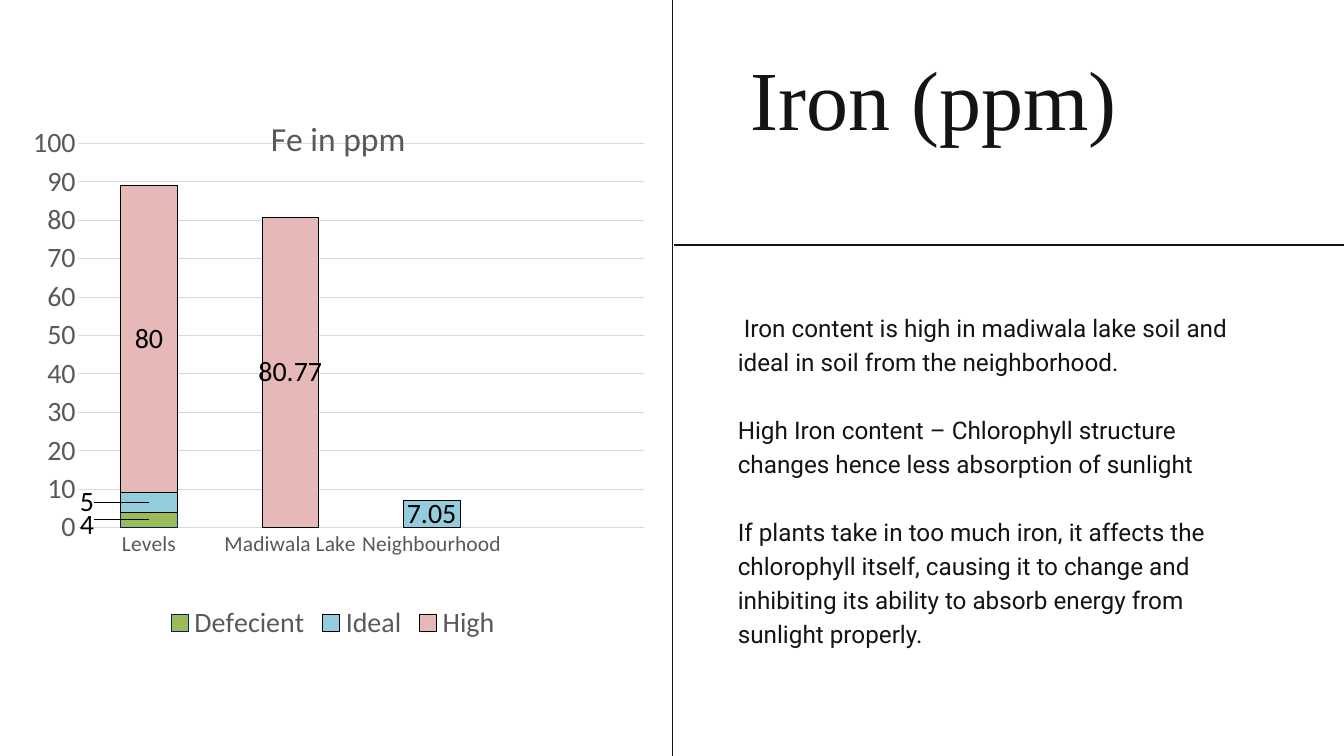
from typing import NamedTuple, Optional

from lxml import etree
from pptx import Presentation
from pptx.chart.data import CategoryChartData
from pptx.dml.color import RGBColor
from pptx.enum.chart import XL_CHART_TYPE, XL_LABEL_POSITION, XL_LEGEND_POSITION, XL_TICK_MARK
from pptx.enum.shapes import MSO_CONNECTOR
from pptx.oxml import parse_xml
from pptx.oxml.ns import nsdecls, qn
from pptx.util import Emu, Pt

PX = 9525  # EMU per px, 96 px to the inch
INK, GREY, GRID = "141414", "595959", "D9D9D9"


class Box(NamedTuple):
    x: int
    y: int
    w: int
    h: int


class Rule(NamedTuple):
    x1: int
    y1: int
    x2: int
    y2: int


class Level(NamedTuple):
    name: str
    values: tuple[Optional[float], ...]
    fill: str
    line: str
    label_shift: Optional[tuple[float, float]] = None  # share of chart size


RULES = [Rule(961, 0, 961, 1080), Rule(963, 350, 1920, 350)]
CATEGORIES = ["Levels", "Madiwala Lake", "Neighbourhood", ""]
LEVELS = [
    Level("Defecient", (4, None, None, None), "9BBB59", "002060", (-0.1, 0.01)),
    Level("Ideal", (5, None, 7.05, None), "93CDDD", "000000", (-0.1, 0)),
    Level("High", (80, 80.77, None, None), "E6B9B8", "000000"),
]
NOTES = [
    " Iron content is high in madiwala lake soil and ideal in soil from the neighborhood.",
    "High Iron content – Chlorophyll structure changes hence less absorption of sunlight",
    "If plants take in too much iron, it affects the chlorophyll itself, causing it to "
    "change and inhibiting its ability to absorb energy from sunlight properly.",
]


def px(n: int) -> Emu:
    return Emu(n * PX)


def rgb(value: str) -> RGBColor:
    return RGBColor.from_string(value)


def style(font, size: float, color: str, name: str = "Calibri") -> None:
    font.size, font.name, font.bold = Pt(size), name, False
    font.color.rgb = rgb(color)


def stroke(line, color: str, width: float) -> None:
    line.color.rgb = rgb(color)
    line.width = Pt(width)


def add_rule(s, rule: Rule) -> None:
    c = s.shapes.add_connector(MSO_CONNECTOR.STRAIGHT, *map(px, rule))
    stroke(c.line, INK, 1.5)
    etree.SubElement(c._element.spPr, qn("a:effectLst"))


def add_text(s, box: Box, texts: list[str], size: float, name: str, leading: float) -> None:
    tf = s.shapes.add_textbox(*map(px, box)).text_frame
    tf.word_wrap = True
    tf.margin_left = tf.margin_right = tf.margin_top = tf.margin_bottom = 0
    for i, text in enumerate(texts):
        p = tf.add_paragraph() if i else tf.paragraphs[0]
        p.text = text
        p.line_spacing = Pt(leading)
        if i:
            p.space_before = Pt(leading)
        style(p.font, size, INK, name)


def manual_layout(x: float, y: float, w: float = 0, h: float = 0, edge: bool = True):
    """Layout in shares of the chart; without edge, x and y are offsets."""
    parts = [("layoutTarget", "inner")] if w else []
    if edge:
        parts += [("xMode", "edge"), ("yMode", "edge")]
    parts += [("x", x), ("y", y)]
    if w:
        parts += [("w", w), ("h", h)]
    body = "".join(f'<c:{tag} val="{val}"/>' for tag, val in parts)
    return parse_xml(f'<c:layout {nsdecls("c")}><c:manualLayout>{body}</c:manualLayout></c:layout>')


def place(parent, layout, after: Optional[str] = None) -> None:
    for old in parent.findall(qn("c:layout")):
        parent.remove(old)
    if after:
        parent.find(qn(after)).addnext(layout)
    else:
        parent.insert(0, layout)


def style_series(ser, level: Level) -> None:
    ser.format.fill.solid()
    ser.format.fill.fore_color.rgb = rgb(level.fill)
    stroke(ser.format.line, level.line, 0.75)
    labels = ser.data_labels
    labels.show_value = True
    labels.position = XL_LABEL_POSITION.CENTER
    style(labels.font, 30, "000000")
    if level.label_shift:
        label = ser.points[0].data_label
        label.position = XL_LABEL_POSITION.CENTER
        style(label.font, 30, "000000")
        d_lbl = ser._element.find(f'{qn("c:dLbls")}/{qn("c:dLbl")}')
        place(d_lbl, manual_layout(*level.label_shift, edge=False), "c:idx")


def add_iron_chart(s, box: Box) -> None:
    data = CategoryChartData()
    data.categories = CATEGORIES
    for level in LEVELS:
        data.add_series(level.name, level.values)
    chart = s.shapes.add_chart(XL_CHART_TYPE.COLUMN_STACKED, *map(px, box), data).chart
    style(chart.font, 30, "000000")

    # Title and legend
    chart.has_title = True
    title = chart.chart_title
    p = title.text_frame.paragraphs[0]
    p.text = "Fe in ppm"
    style(p.font, 36, GREY)
    place(title._element, manual_layout(0.39, 0.05), "c:tx")
    chart.has_legend = True
    chart.legend.position = XL_LEGEND_POSITION.BOTTOM
    chart.legend.include_in_layout = False
    style(chart.legend.font, 30, GREY)

    # Axes
    cat, val = chart.category_axis, chart.value_axis
    for axis, size in ((cat, 23), (val, 30)):
        axis.major_tick_mark = axis.minor_tick_mark = XL_TICK_MARK.NONE
        style(axis.tick_labels.font, size, GREY)
    stroke(cat.format.line, GRID, 0.75)
    val.format.line.fill.background()
    val.minimum_scale, val.maximum_scale, val.major_unit = 0, 100, 10
    stroke(val.major_gridlines.format.line, GRID, 0.75)

    # Columns
    plot = chart.plots[0]
    plot.vary_by_categories = False
    plot.gap_width, plot.overlap = 150, 100
    for ser, level in zip(plot.series, LEVELS):
        style_series(ser, level)
    place(plot._element.getparent(), manual_layout(0.09, 0.11, 0.91, 0.68))


def main() -> None:
    prs = Presentation()
    prs.slide_width, prs.slide_height = px(1920), px(1080)
    s = prs.slides.add_slide(prs.slide_layouts[6])

    # Dividing lines
    for rule in RULES:
        add_rule(s, rule)

    # Heading and notes
    add_text(s, Box(1054, 441, 757, 481), NOTES, 26, "Roboto", 36.4)
    add_text(s, Box(1072, 67, 757, 146), ["Iron (ppm)"], 90, "Times New Roman", 108)

    # Chart
    add_iron_chart(s, Box(32, 116, 888, 807))
    prs.save("out.pptx")


if __name__ == "__main__":
    main()
